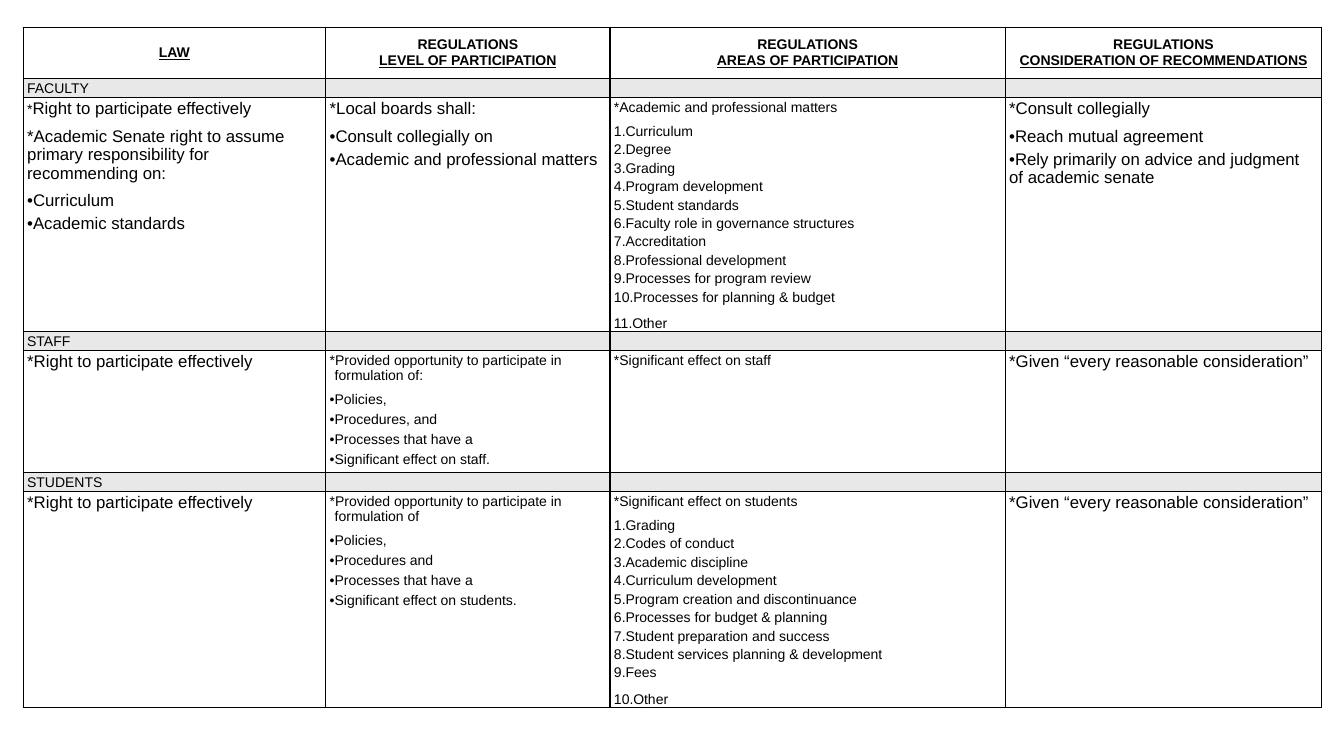
from pptx import Presentation
from pptx.dml.color import RGBColor
from pptx.enum.text import MSO_ANCHOR, PP_ALIGN
from pptx.oxml.xmlchemy import OxmlElement
from pptx.util import Inches, Pt

CENTER, MIDDLE = PP_ALIGN.CENTER, MSO_ANCHOR.MIDDLE
BLACK = RGBColor(0x00, 0x00, 0x00)
BAND = RGBColor(0xE8, 0xE8, 0xE8)
FONT = "Arial"
COLUMN_WIDTHS = [3, 2.82, 3.92, 3.14]
ROW_HEIGHTS = [0.51, 0.18, 2.23, 0.18, 1.21, 0.18, 2.06]

HEADERS = [
    ["LAW"],
    ["REGULATIONS", "LEVEL OF PARTICIPATION"],
    ["REGULATIONS", "AREAS OF PARTICIPATION"],
    ["REGULATIONS", "CONSIDERATION OF RECOMMENDATIONS"],
]

# Each cell: font size, hanging indent, lead paragraphs, list kind, list items
GROUPS = {
    "FACULTY": [
        (12, 0, ["*Right to participate effectively",
                 "*Academic Senate right to assume primary responsibility for recommending on:"],
         "bullet", ["Curriculum", "Academic standards"]),
        (12, 0.05, ["*Local boards shall:"],
         "bullet", ["Consult collegially on", "Academic and professional matters"]),
        (10, 0, ["*Academic and professional matters"],
         "number", ["Curriculum", "Degree", "Grading", "Program development",
                    "Student standards", "Faculty role in governance structures",
                    "Accreditation", "Professional development",
                    "Processes for program review",
                    "Processes for planning & budget", "Other"]),
        (12, 0, ["*Consult collegially"],
         "bullet", ["Reach mutual agreement",
                    "Rely primarily on advice and judgment of academic senate"]),
    ],
    "STAFF": [
        (12, 0, ["*Right to participate effectively"], None, []),
        (10, 0.05, ["*Provided opportunity to participate in formulation of:"],
         "bullet", ["Policies,", "Procedures, and", "Processes that have a",
                    "Significant effect on staff."]),
        (10, 0, ["*Significant effect on staff"], None, []),
        (12, 0.07, ["*Given “every reasonable consideration”"], None, []),
    ],
    "STUDENTS": [
        (12, 0, ["*Right to participate effectively"], None, []),
        (10, 0.05, ["*Provided opportunity to participate in formulation of"],
         "bullet", ["Policies,", "Procedures and", "Processes that have a",
                    "Significant effect on students."]),
        (10, 0, ["*Significant effect on students"],
         "number", ["Grading", "Codes of conduct", "Academic discipline",
                    "Curriculum development", "Program creation and discontinuance",
                    "Processes for budget & planning", "Student preparation and success",
                    "Student services planning & development", "Fees", "Other"]),
        (12, 0.07, ["*Given “every reasonable consideration”"], None, []),
    ],
}


def add_child(parent, tag, **attributes):
    child = OxmlElement(tag)
    for name, value in attributes.items():
        child.set(name, str(value))
    parent.append(child)
    return child


def write_paragraph(cell, index, text, size, kind=None, indent=0):
    frame = cell.text_frame
    paragraph = frame.paragraphs[0] if index == 0 else frame.add_paragraph()
    properties = paragraph._p.get_or_add_pPr()
    properties.set("marL", str(Inches(indent)))
    properties.set("indent", str(-Inches(indent)))
    if kind == "bullet":
        add_child(properties, "a:buFont", typeface=FONT)
        add_child(properties, "a:buChar", char="•")
    elif kind == "number":
        add_child(properties, "a:buFont", typeface=FONT)
        add_child(properties, "a:buAutoNum", type="arabicPeriod")
    else:
        add_child(properties, "a:buNone")
    paragraph.add_run().text = text
    paragraph.font.name = FONT
    paragraph.font.size = Pt(size)
    paragraph.font.color.rgb = BLACK
    return paragraph


presentation = Presentation()
presentation.slide_width = Inches(13.33)
presentation.slide_height = Inches(7.5)
slide = presentation.slides.add_slide(presentation.slide_layouts[6])

# Table grid
table = slide.shapes.add_table(
    len(ROW_HEIGHTS), len(COLUMN_WIDTHS), Inches(0.23), Inches(0.27),
    Inches(sum(COLUMN_WIDTHS)), Inches(sum(ROW_HEIGHTS))).table
table.first_row = False
table.horz_banding = False
for column, width in zip(table.columns, COLUMN_WIDTHS):
    column.width = Inches(width)
for row, height in zip(table.rows, ROW_HEIGHTS):
    row.height = Inches(height)

# Borders, margins and fills
for row_index, row in enumerate(table.rows):
    for cell in row.cells:
        cell_properties = cell._tc.get_or_add_tcPr()
        for side in ("L", "R", "T", "B"):
            line = add_child(cell_properties, f"a:ln{side}", w=Pt(1))
            line_fill = add_child(line, "a:solidFill")
            add_child(line_fill, "a:srgbClr", val=BLACK)
        is_header = row_index == 0
        cell.margin_left = cell.margin_right = Inches(0.07 if is_header else 0.04)
        cell.margin_top = Inches(0 if is_header else 0.02)
        cell.margin_bottom = 0
        if row_index % 2:
            cell.fill.solid()
            cell.fill.fore_color.rgb = BAND
        else:
            cell.fill.background()

# Header row: the last line of each heading is underlined
for column_index, lines in enumerate(HEADERS):
    cell = table.cell(0, column_index)
    cell.vertical_anchor = MIDDLE
    for index, text in enumerate(lines):
        paragraph = write_paragraph(cell, index, text, 10)
        paragraph.alignment = CENTER
        paragraph.font.bold = True
        paragraph.font.underline = index == len(lines) - 1

# Each group: a shaded band, then a row of details
for group_index, (group, details) in enumerate(GROUPS.items()):
    band_row = 1 + 2 * group_index
    write_paragraph(table.cell(band_row, 0), 0, group, 10)
    for column_index in range(1, len(COLUMN_WIDTHS)):
        empty_paragraph = table.cell(band_row, column_index).text_frame.paragraphs[0]
        add_child(empty_paragraph._p, "a:endParaRPr", sz=1000)

    for column_index, (size, indent, leads, kind, items) in enumerate(details):
        cell = table.cell(band_row + 1, column_index)
        for index, text in enumerate(leads):
            paragraph = write_paragraph(cell, index, text, size, indent=indent)
            paragraph.space_after = Pt(6 if items else 0)
        for index, text in enumerate(items, len(leads)):
            paragraph = write_paragraph(cell, index, text, size, kind, indent)
            paragraph.space_after = Pt(2 if kind == "number" else 3)
            if text == "Other":
                paragraph.line_spacing = 1.5

# The first asterisk is smaller than the words after it
first_paragraph = table.cell(2, 0).text_frame.paragraphs[0]
asterisk = first_paragraph.runs[0]
words = first_paragraph.add_run()
words.text = asterisk.text[1:]
asterisk.text = "*"
asterisk.font.size = Pt(10)

presentation.save("out.pptx")
